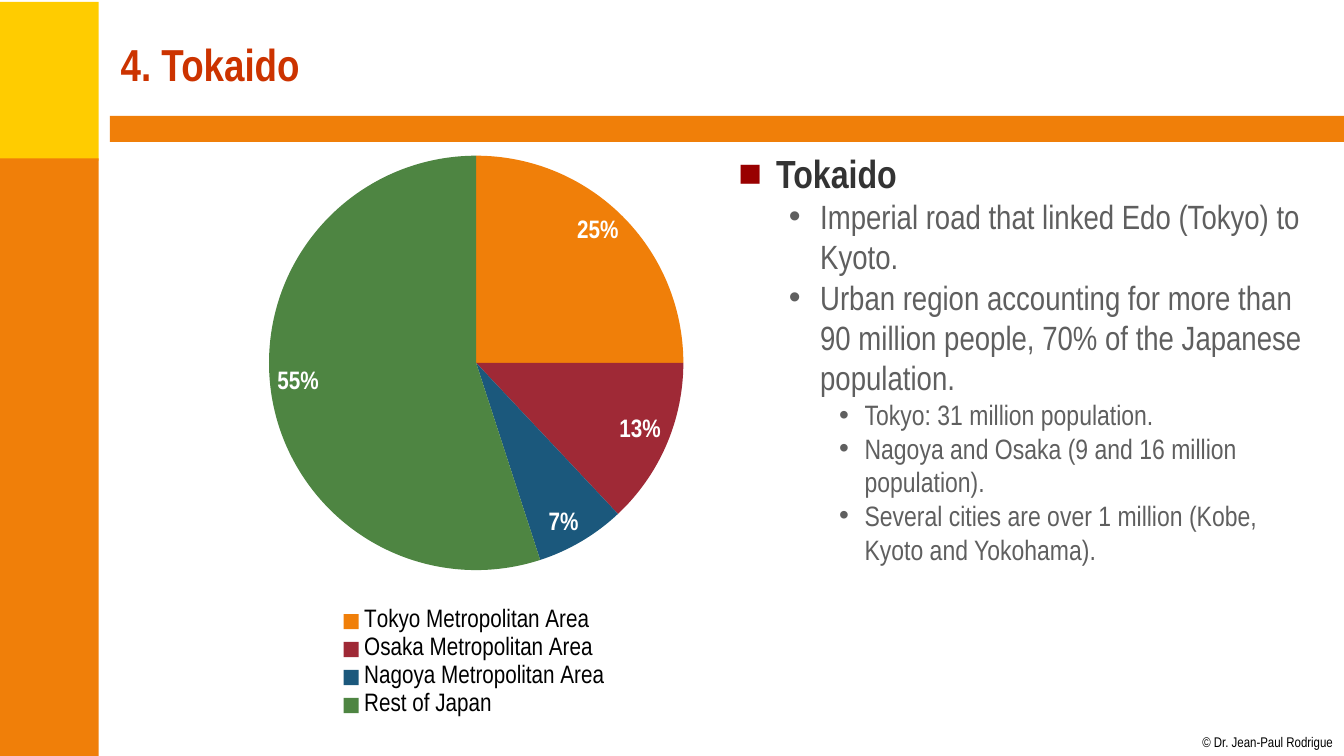
import pptx
import pptx.util
import pptx.dml.color
import pptx.chart.data
import pptx.enum.chart
import pptx.enum.shapes
import pptx.enum.text
import pptx.oxml
import pptx.oxml.ns
from pptx.util import Cm

FONT = "Arial Narrow"
ORANGE = "F07F09"
SHARES = [
    ("Tokyo Metropolitan Area", 25, ORANGE),
    ("Osaka Metropolitan Area", 13, "9F2936"),
    ("Nagoya Metropolitan Area", 7, "1B587C"),
    ("Rest of Japan", 55, "4E8542"),
]
# Per level: left indent and hanging indent in cm, bullet, bullet colour, font
LEVELS = [
    (0.95, 0.95, "■", "990000", {"size": 28, "bold": True, "color": "333333"}),
    (2.06, 0.79, "•", "5F5F5F", {"size": 24, "color": "5F5F5F"}),
    (3.18, 0.64, "•", "5F5F5F", {"size": 20, "color": "5F5F5F"}),
]
POINTS = [
    (0, "Tokaido"),
    (1, "Imperial road that linked Edo (Tokyo) to Kyoto."),
    (1, "Urban region accounting for more than 90 million people, "
        "70% of the Japanese population."),
    (2, "Tokyo: 31 million population."),
    (2, "Nagoya and Osaka (9 and 16 million population)."),
    (2, "Several cities are over 1 million (Kobe, Kyoto and Yokohama)."),
]


def rgb(value):
    return pptx.dml.color.RGBColor.from_string(value)


def set_font(font, **fmt):
    for key, value in {"name": FONT, "bold": False, **fmt}.items():
        if key == "color":
            font.color.rgb = rgb(value)
        else:
            setattr(font, key, pptx.util.Pt(value) if key == "size" else value)


def add_block(s, box, color):
    sp = s.shapes.add_shape(pptx.enum.shapes.MSO_SHAPE.RECTANGLE, *map(Cm, box))
    sp.shadow.inherit = False
    sp.fill.solid()
    sp.fill.fore_color.rgb = rgb(color)
    sp.line.fill.background()


def add_text_frame(s, box, **fmt):
    tf = s.shapes.add_textbox(*map(Cm, box)).text_frame
    for key, value in {"word_wrap": True, **fmt}.items():
        setattr(tf, key, value)
    return tf


def add_line(p, text, **fmt):
    r = p.add_run()
    r.text = text
    set_font(r.font, **fmt)


def set_bullet(p, left, hanging, char, color):
    pPr = p._p.get_or_add_pPr()
    pPr.set("marL", str(Cm(left)))
    pPr.set("indent", str(-Cm(hanging)))
    ns = pptx.oxml.ns.nsdecls("a")
    for xml in (f'<a:buClr {ns}><a:srgbClr val="{color}"/></a:buClr>',
                f'<a:buFont {ns} typeface="Arial"/>',
                f'<a:buChar {ns} char="{char}"/>'):
        pPr.append(pptx.oxml.parse_xml(xml))


def add_bullets(s, box, points):
    tf = add_text_frame(s, box)
    for i, (level, text) in enumerate(points):
        p = tf.add_paragraph() if i else tf.paragraphs[0]
        left, hanging, char, color, fmt = LEVELS[level]
        p.level = level
        set_bullet(p, left, hanging, char, color)
        add_line(p, text, **fmt)


def set_layout(element, inner, **fractions):
    """Place a chart part by fractions of the chart area."""
    old = element.find(pptx.oxml.ns.qn("c:layout"))
    if old is not None:
        element.remove(old)
    target = '<c:layoutTarget val="inner"/>' if inner else ""
    modes = '<c:xMode val="edge"/><c:yMode val="edge"/>'
    sizes = "".join(f'<c:{k} val="{v}"/>' for k, v in fractions.items())
    layout = pptx.oxml.parse_xml(
        f'<c:layout {pptx.oxml.ns.nsdecls("c")}><c:manualLayout>'
        f'{target}{modes}{sizes}</c:manualLayout></c:layout>')
    # The legend position comes before its layout
    element.insert(0 if inner else 1, layout)


def add_pie(s, box, shares):
    data = pptx.chart.data.CategoryChartData()
    data.categories = [name for name, _, _ in shares]
    data.add_series("Series 1", [value for _, value, _ in shares])
    chart = s.shapes.add_chart(
        pptx.enum.chart.XL_CHART_TYPE.PIE, *map(Cm, box), data).chart
    set_font(chart.font, size=18, color="000000")
    chart.has_title = False
    chart.has_legend = True
    chart.legend.position = pptx.enum.chart.XL_LEGEND_POSITION.BOTTOM
    chart.legend.include_in_layout = False

    # Slices and percentages
    plot = chart.plots[0]
    plot.vary_by_categories = True
    for i, (_, _, color) in enumerate(shares):
        fill = plot.series[0].points[i].format.fill
        fill.solid()
        fill.fore_color.rgb = rgb(color)
    plot.has_data_labels = True
    labels = plot.data_labels
    set_font(labels.font, size=18, bold=True, color="FFFFFF")
    for key, value in {
        "show_percentage": True, "show_value": False,
        "number_format": "0%", "number_format_is_linked": False,
        "position": pptx.enum.chart.XL_LABEL_POSITION.INSIDE_END,
    }.items():
        setattr(labels, key, value)

    # Circle above, stacked legend below
    plot_area = chart._chartSpace.chart.plotArea
    set_layout(plot_area, True, x=0.04, y=0.02, w=0.93, h=0.71)
    set_layout(chart.legend._element, False, x=0.2, y=0.79, w=0.6, h=0.2)


def main():
    prs = pptx.Presentation()
    prs.slide_width, prs.slide_height = Cm(33.87), Cm(19.05)
    s = prs.slides.add_slide(prs.slide_layouts[6])

    # Frame
    add_block(s, (-0.05, 0.05, 2.54, 4), "FFCC00")
    add_block(s, (-0.05, 3.99, 2.54, 15.06), ORANGE)
    add_block(s, (2.77, 2.92, 31.1, 0.66), ORANGE)

    # Copyright line
    tf = add_text_frame(s, (30.3, 18.49, 3.33, 0.43), word_wrap=False,
                        margin_left=0, margin_right=0,
                        margin_top=0, margin_bottom=0)
    add_line(tf.paragraphs[0], "© Dr. Jean-Paul Rodrigue",
             size=10, color="000000")

    # Title
    tf = add_text_frame(s, (2.79, 0.28, 30.48, 2.64),
                        vertical_anchor=pptx.enum.text.MSO_ANCHOR.MIDDLE)
    add_line(tf.paragraphs[0], "4. Tokaido", size=32, bold=True, color="CC3300")

    # Content
    add_pie(s, (6.32, 3.63, 11.25, 14.71), SHARES)
    add_bullets(s, (18.36, 3.63, 14.99, 14.71), POINTS)

    prs.save("out.pptx")


if __name__ == "__main__":
    main()
